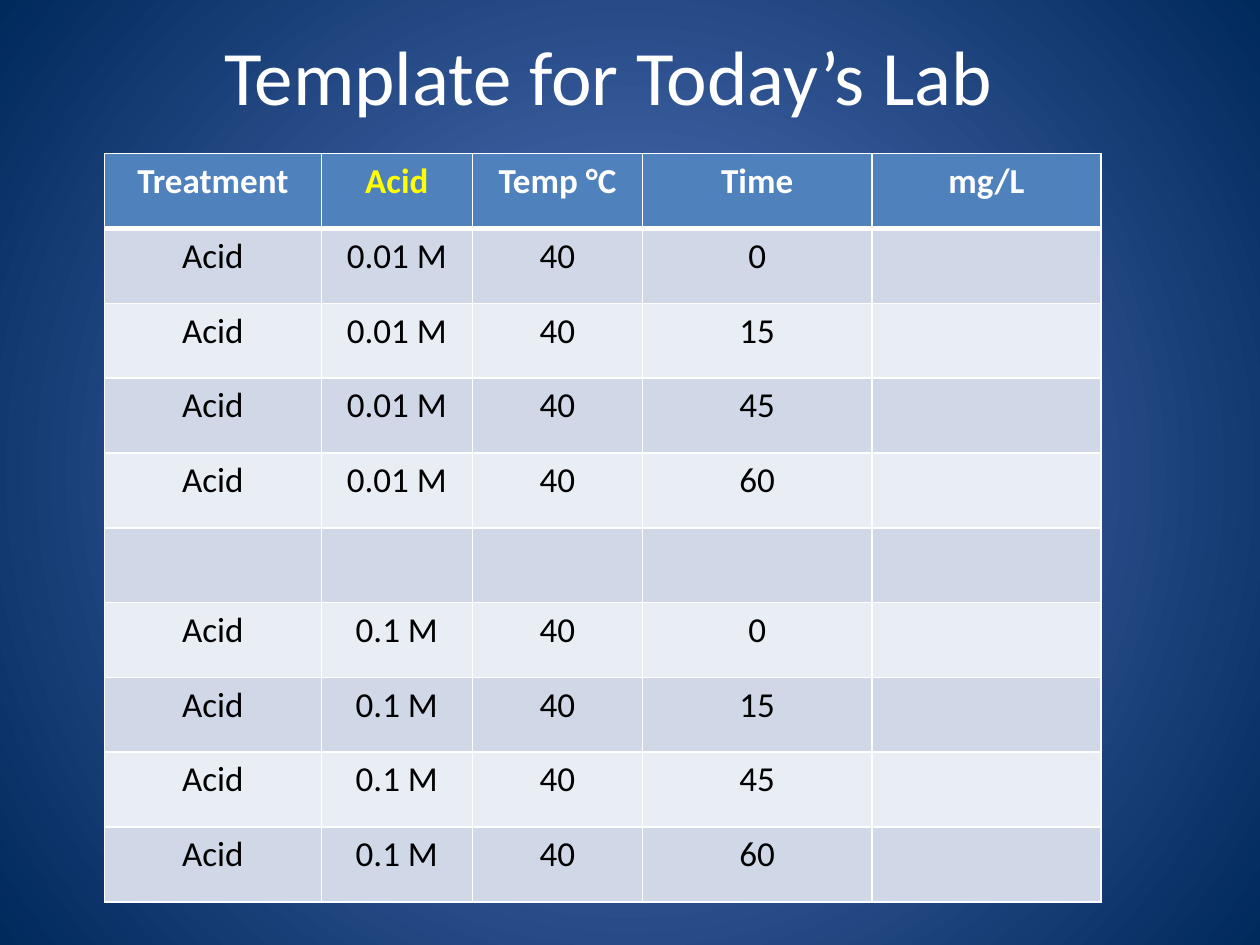
from lxml import etree
from pptx import Presentation
from pptx import util as u
from pptx.dml.color import RGBColor
from pptx.enum import text
from pptx.oxml.ns import qn

COLORS = {
    "white": "FFFFFF", "black": "000000", "yellow": "FFFF00",
    "header": "4F81BD", "odd": "D0D8E8", "even": "E9EDF4",
    "glow": "5E7CC5", "edge": "00295C",
}


def add_run(tf, content, size, color, bold=False):
    p = tf.paragraphs[0]
    p.alignment = text.PP_ALIGN.CENTER
    r = p.add_run()
    r.text = content
    r.font.name = "Calibri"
    r.font.size = u.Pt(size)
    r.font.bold = bold
    r.font.color.rgb = RGBColor.from_string(COLORS[color])


def set_borders(cell, widths):
    """Draw white cell borders; widths maps L, R, T, B to points."""
    tc_pr = cell._tc.get_or_add_tcPr()
    for i, (side, width) in enumerate(widths.items()):
        ln = etree.Element(qn(f"a:ln{side}"), w=str(u.Pt(width)))
        fill = etree.SubElement(ln, qn("a:solidFill"))
        etree.SubElement(fill, qn("a:srgbClr"), val=COLORS["white"])
        tc_pr.insert(i, ln)


prs = Presentation()
prs.slide_width, prs.slide_height = u.Inches(10), u.Inches(7.5)
s = prs.slides.add_slide(prs.slide_layouts[5])

# Radial background
bg = s.background.fill
bg.gradient()
for stop, name in zip(bg.gradient_stops, ("glow", "edge")):
    stop.color.rgb = RGBColor.from_string(COLORS[name])
lin = s.background._cSld.find(".//" + qn("a:lin"))
radial = etree.Element(qn("a:path"), path="circle")
etree.SubElement(radial, qn("a:fillToRect"), l="50000", t="50000", r="50000", b="50000")
lin.getparent().replace(lin, radial)

# Title
title = s.shapes.title
title.left, title.top = u.Inches(0.33), u.Inches(-0.03)
title.width, title.height = u.Inches(9), u.Inches(1.25)
title.text_frame.vertical_anchor = text.MSO_ANCHOR.MIDDLE
add_run(title.text_frame, "Template for Today’s Lab", 44, "white")

# Lab table: one block of times per acid strength, with an empty row between
times = ("0", "15", "45", "60")
weak, strong = ([("Acid", acid, "40", t, "") for t in times]
                for acid in ("0.01 M", "0.1 M"))
header = ("Treatment", "Acid", "Temp °C", "Time", "mg/L")
rows = [header, *weak, ("",) * len(header), *strong]
col_widths = (1.72, 1.2, 1.35, 1.82, 1.82)
row_height = 0.594

table = s.shapes.add_table(
    len(rows), len(header), u.Inches(0.83), u.Inches(1.22),
    u.Inches(sum(col_widths)), u.Inches(row_height * len(rows))).table
for col, width in zip(table.columns, col_widths):
    col.width = u.Inches(width)

for i, row in enumerate(rows):
    table.rows[i].height = u.Inches(row_height)
    band = "header" if i == 0 else "odd" if i % 2 else "even"
    for j, value in enumerate(row):
        cell = table.cell(i, j)
        cell.fill.solid()
        cell.fill.fore_color.rgb = RGBColor.from_string(COLORS[band])
        set_borders(cell, {"L": 1, "R": 1, "T": 3 if i == 1 else 1, "B": 3 if i == 0 else 1})
        if value:
            color = "black" if i else "yellow" if value == "Acid" else "white"
            add_run(cell.text_frame, value, 20, color, bold=i == 0)

prs.save("out.pptx")
